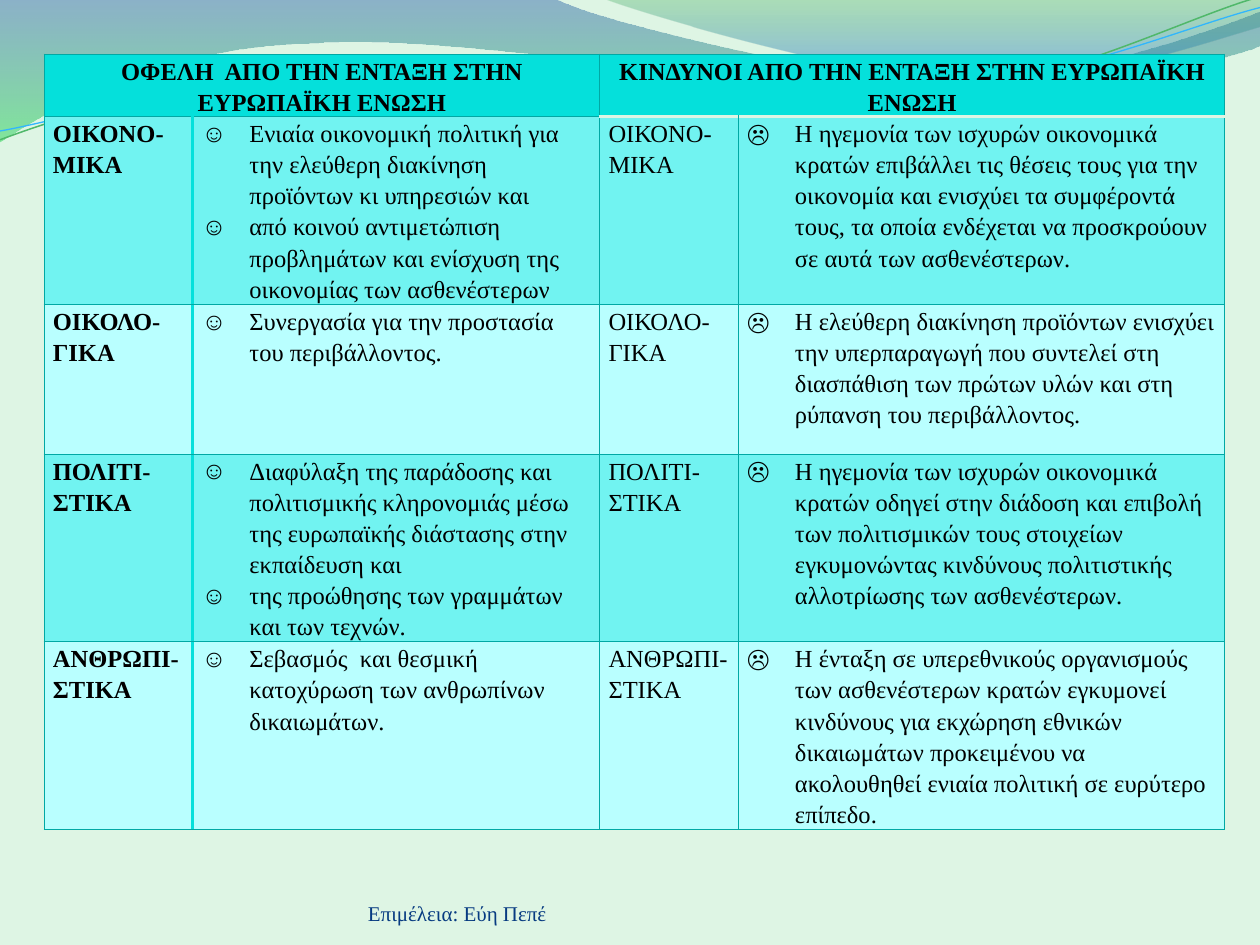
from collections import namedtuple
from dataclasses import dataclass
from lxml.etree import SubElement
from pptx import Presentation
from pptx.dml.color import RGBColor
from pptx.enum.text import MSO_ANCHOR, PP_ALIGN
from pptx.oxml.ns import qn
from pptx.util import Inches, Pt

Box = namedtuple("Box", "left top width height")


@dataclass(frozen=True)
class Theme:
    font: str = "Times New Roman"
    body: float = 14
    small: float = 12
    pitch: float = 17.8
    page: str = "DEF5E4"
    ink: str = "000000"
    navy: str = "073B81"
    head: str = "05E0DB"
    dark: str = "71F3F1"
    light: str = "B9FFFF"
    rule: str = "01A8A4"
    green: str = "50B86A"
    blue: str = "31B6FD"
    thin: float = 0.75
    thick: float = 2


THEME = Theme()

BANDS = [
    ([(-0.01, -0.01), (4.4, -0.01),
      (4.76, 0.17, 6.64, 0.63, 7.58, 0.63), (8.53, 0.63, 9.58, 0.26, 10, 0.09),
      (10.01, 0.36), (9.83, 0.44, 8.7, 0.76, 7.46, 0.75),
      (6.22, 0.75, 3.82, 0.28, 2.57, 0.34), (1.29, 0.36, 0.46, 0.83, -0.01, 1.13)],
     [(0, "2960A7", 45), (1, "35DA5E", 55)]),
    ([(4.79, -0.01), (5.09, 0.11, 6.82, 0.62, 7.69, 0.65),
      (8.56, 0.69, 9.61, 0.32, 10, 0.21), (10, 0)],
     [(0, "36A752", 30), (0.8, "2472D3", 45)]),
]
WAVES = [
    ([(0, 1.11), (0.48, 0.93, 1.58, 0.57, 2.77, 0.52),
      (3.95, 0.47, 5.93, 0.89, 7.13, 0.8), (8.33, 0.71, 9.38, 0.15, 9.98, -0.02)],
     THEME.green, 0.85),
    ([(0, 1.04), (0.47, 0.96, 1.64, 0.61, 2.83, 0.56),
      (4.03, 0.51, 5.97, 0.84, 7.17, 0.75), (8.36, 0.67, 9.41, 0.21, 10, 0.06)],
     THEME.blue, 0.75),
]

COLS = [1.18, 3.23, 1.1, 3.86]
ROWS = [0.49, 1.49, 1.19, 1.49, 1.49]
HEADS = ["ΟΦΕΛΗ  ΑΠΟ ΤΗΝ ΕΝΤΑΞΗ ΣΤΗΝ ΕΥΡΩΠΑΪΚΗ ΕΝΩΣΗ",
         "ΚΙΝΔΥΝΟΙ ΑΠΟ ΤΗΝ ΕΝΤΑΞΗ ΣΤΗΝ ΕΥΡΩΠΑΪΚΗ ΕΝΩΣΗ"]
TOPICS = [
    ("ΟΙΚΟΝΟ-ΜΙΚΑ",
     ["Ενιαία οικονομική πολιτική για την ελεύθερη διακίνηση προϊόντων κι υπηρεσιών και",
      "από κοινού αντιμετώπιση προβλημάτων και ενίσχυση της οικονομίας των ασθενέστερων"],
     ["Η ηγεμονία των ισχυρών οικονομικά κρατών επιβάλλει τις θέσεις τους για την "
      "οικονομία και ενισχύει τα συμφέροντά τους, τα οποία ενδέχεται να προσκρούουν "
      "σε αυτά των ασθενέστερων."]),
    ("ΟΙΚΟΛΟ-ΓΙΚΑ",
     ["Συνεργασία για την προστασία του περιβάλλοντος."],
     ["Η ελεύθερη διακίνηση προϊόντων ενισχύει την υπερπαραγωγή που συντελεί στη "
      "διασπάθιση των πρώτων υλών και στη ρύπανση του περιβάλλοντος."]),
    ("ΠΟΛΙΤΙ-ΣΤΙΚΑ",
     ["Διαφύλαξη της παράδοσης και πολιτισμικής κληρονομιάς μέσω της ευρωπαϊκής "
      "διάστασης στην εκπαίδευση και",
      "της προώθησης των γραμμάτων και των τεχνών."],
     ["Η ηγεμονία των ισχυρών οικονομικά κρατών οδηγεί στην διάδοση και επιβολή των "
      "πολιτισμικών τους στοιχείων εγκυμονώντας κινδύνους πολιτιστικής αλλοτρίωσης "
      "των ασθενέστερων."]),
    ("ΑΝΘΡΩΠΙ-ΣΤΙΚΑ",
     ["Σεβασμός  και θεσμική κατοχύρωση των ανθρωπίνων δικαιωμάτων."],
     ["Η ένταξη σε υπερεθνικούς οργανισμούς των ασθενέστερων κρατών εγκυμονεί "
      "κινδύνους για εκχώρηση εθνικών δικαιωμάτων προκειμένου να ακολουθηθεί ενιαία "
      "πολιτική σε ευρύτερο επίπεδο."]),
]


def tint(code):
    return RGBColor.from_string(code)


def write(frame, lines, size=THEME.body, color=THEME.ink, bold=False,
          align=PP_ALIGN.LEFT, space=Pt(THEME.pitch), mark=None):
    frame.word_wrap = True
    for i, line in enumerate(lines):
        para = frame.paragraphs[0] if i == 0 else frame.add_paragraph()
        para.alignment, para.line_spacing = align, space
        para.space_before = para.space_after = Pt(0)
        run = para.add_run()
        run.text = line
        font = run.font
        font.name, font.size, font.bold = THEME.font, Pt(size), bold
        font.color.rgb = tint(color)
        if mark:
            props = para._p.get_or_add_pPr()
            props.set("marL", str(Inches(0.38)))
            props.set("indent", str(Inches(-0.38)))
            SubElement(props, qn("a:buFont")).set("typeface", THEME.font)
            SubElement(props, qn("a:buChar")).set("char", mark)


def bend(shape, steps):
    lines = iter(list(shape._element.iter(qn("a:lnTo"))))
    for step in steps:
        first = next(lines)
        if len(step) == 6:
            first.tag = qn("a:cubicBezTo")
            for line in (next(lines), next(lines)):
                first.append(line[0])
                line.getparent().remove(line)


def draw(slide, box, curve, close):
    def place(x, y):
        return Inches(box.left + x), Inches(box.top + y)

    start, *steps = curve
    dots = [place(*step[i:i + 2]) for step in steps for i in range(0, len(step), 2)]
    pen = slide.shapes.build_freeform(*place(*start))
    pen.add_line_segments(dots, close=close)
    shape = pen.convert_to_shape()
    bend(shape, steps)
    shape.shadow.inherit = False
    return shape


def crown(slide, box):
    for curve, stops in BANDS:
        band = draw(slide, box, curve, True)
        band.line.fill.background()
        band.fill.gradient()
        band.fill.gradient_angle = 270
        for stop, (place, code, alpha) in zip(band.fill.gradient_stops, stops):
            stop.position = place
            stop.color.rgb = tint(code)
            node = stop._gs.find(qn("a:srgbClr"))
            SubElement(node, qn("a:alpha")).set("val", str(alpha * 1000))
    for curve, code, width in WAVES:
        wave = draw(slide, box, curve, False)
        wave.fill.background()
        wave.line.color.rgb, wave.line.width = tint(code), Pt(width)


def edge(cell, row, col):
    rule = (THEME.rule, THEME.thin)
    sides = dict.fromkeys(("lnL", "lnR", "lnT", "lnB"), rule)
    if row and col < 2:
        sides["lnL" if col else "lnR"] = (THEME.head, THEME.thick)
    if row < 2 <= col:
        sides["lnT" if row else "lnB"] = (THEME.page, THEME.thick)
    props = cell._tc.get_or_add_tcPr()
    for side, (code, width) in sides.items():
        line = SubElement(props, qn(f"a:{side}"), w=str(Pt(width)))
        fill = SubElement(line, qn("a:solidFill"))
        SubElement(fill, qn("a:srgbClr"), val=code)


def chart(slide, box):
    grid = slide.shapes.add_table(len(ROWS), len(COLS), *map(Inches, box)).table
    grid.first_row = grid.horz_banding = False
    for col, width in zip(grid.columns, COLS):
        col.width = Inches(width)
    for row, height in zip(grid.rows, ROWS):
        row.height = Inches(height)
    for r in range(len(ROWS)):
        for c in range(len(COLS)):
            cell = grid.cell(r, c)
            edge(cell, r, c)
            cell.margin_left = cell.margin_right = Inches(0.07)
            cell.margin_top = cell.margin_bottom = 0
            cell.fill.solid()
            shade = THEME.dark if r % 2 else THEME.light
            cell.fill.fore_color.rgb = tint(shade if r else THEME.head)
    for c, head in zip((0, 2), HEADS):
        grid.cell(0, c).merge(grid.cell(0, c + 1))
        write(grid.cell(0, c).text_frame, [head], bold=True, align=PP_ALIGN.CENTER)
    for r, (name, gains, risks) in enumerate(TOPICS, 1):
        for c, lines, mark in ((0, gains, "☺"), (2, risks, "☹")):
            write(grid.cell(r, c).text_frame, [name], bold=c == 0)
            write(grid.cell(r, c + 1).text_frame, lines, mark=mark)


def foot(slide, box):
    frame = slide.shapes.add_textbox(*map(Inches, box)).text_frame
    frame.margin_left = frame.margin_right = 0
    frame.margin_top = frame.margin_bottom = 0
    frame.vertical_anchor = MSO_ANCHOR.BOTTOM
    write(frame, ["Επιμέλεια: Εύη Πεπέ"], size=THEME.small, color=THEME.navy, space=1)


def main():
    deck = Presentation()
    deck.slide_width, deck.slide_height = Inches(10), Inches(7.5)
    slide = deck.slides.add_slide(deck.slide_layouts[6])
    slide.background.fill.solid()
    slide.background.fill.fore_color.rgb = tint(THEME.page)
    crown(slide, Box(0, 0, 10, 1.13))
    foot(slide, Box(2.92, 6.95, 3.67, 0.4))
    chart(slide, Box(0.35, 0.43, sum(COLS), sum(ROWS)))
    deck.save("out.pptx")


if __name__ == "__main__":
    main()
